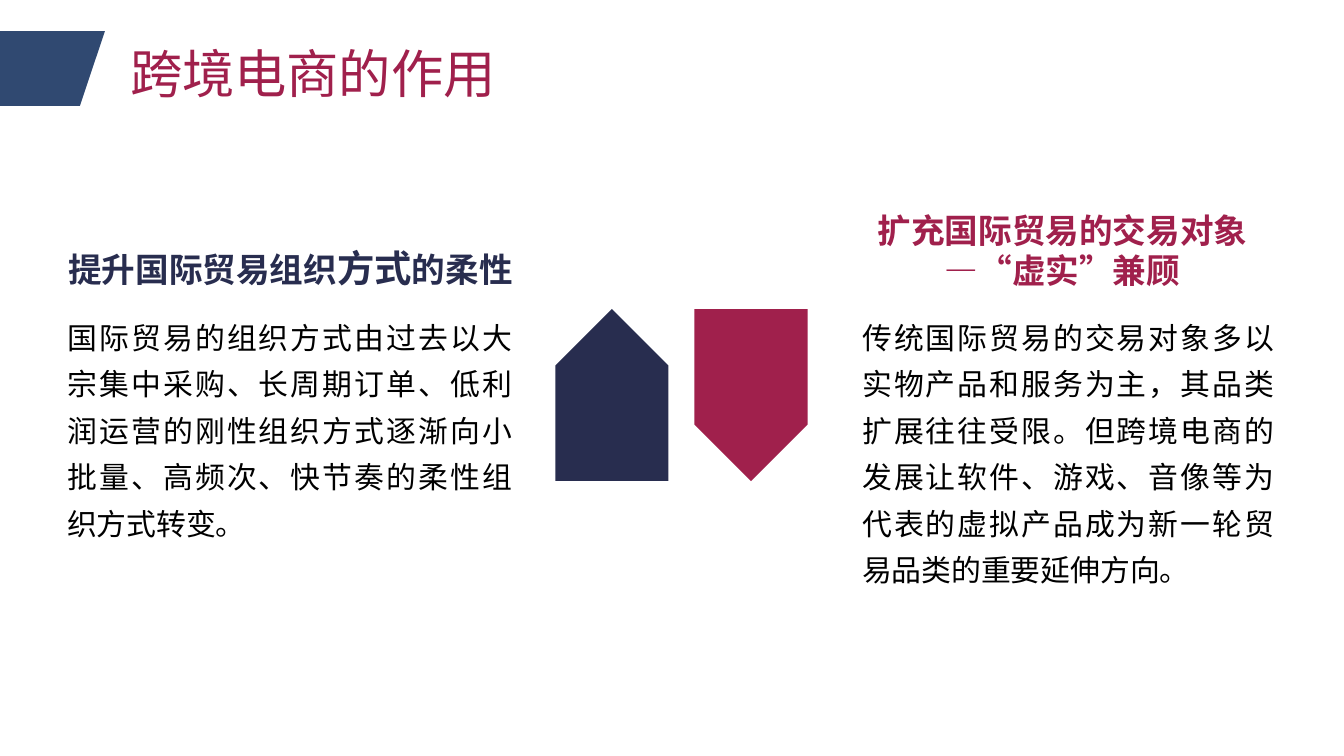
from pptx import Presentation
from pptx.dml.color import RGBColor
from pptx.enum.lang import MSO_LANGUAGE_ID as LANG
from pptx.enum.shapes import MSO_SHAPE as SHAPE
from pptx.enum.text import PP_ALIGN as ALIGN
from pptx.util import Emu, Pt
from lxml.etree import SubElement

PX = 9144000 / 1344
THEME = {
    "font": "Noto Sans CJK SC",
    "red": RGBColor.from_string("A0204C"),
    "navy": RGBColor.from_string("282D4F"),
    "blue": RGBColor.from_string("304971"),
    "black": RGBColor.from_string("000000"),
    "title": 28,
    "heading": 18,
    "emphasis": 20,
    "body": 16,
}


def add_text(s, text, box, size, color, bold=False, align=ALIGN.LEFT, spacing=None):
    tb = s.shapes.add_textbox(*[Emu(round(v * PX)) for v in box])
    tf = tb.text_frame
    tf.word_wrap = True
    p = tf.paragraphs[0]
    p.alignment = align
    p.line_spacing = spacing
    runs = [(text, size)] if isinstance(text, str) else text
    for words, run_size in runs:
        r = p.add_run()
        r.text = words
        r.font.size = Pt(THEME[run_size])
        r.font.bold = bold
        r.font.color.rgb = THEME[color]
        r.font.name = THEME["font"]
        r.font.language_id = LANG.SIMPLIFIED_CHINESE
        ns = r.font._element.nsmap["a"]
        SubElement(r.font._element, f"{{{ns}}}ea", typeface=THEME["font"])


def paint(sp, color):
    sp.shadow.inherit = False
    sp.fill.solid()
    sp.fill.fore_color.rgb = THEME[color]
    sp.line.fill.background()


prs = Presentation()
prs.slide_width = Emu(round(1344 * PX))
prs.slide_height = Emu(round(756 * PX))
s = prs.slides.add_slide(prs.slide_layouts[6])

builder = s.shapes.build_freeform(0, 31, scale=PX)
builder.add_line_segments([(105, 31), (80, 106), (0, 106)], close=True)
paint(builder.convert_to_shape(), "blue")
add_text(s, "跨境电商的作用", (117, 35, 453, 77), "title", "red")

ARROW_LENGTH, ARROW_WIDTH, ARROW_MIDDLE = 172, 113, 395
for center, rotation, color in [(751, 90, "red"), (612, 270, "navy")]:
    left, top = center - ARROW_LENGTH / 2, ARROW_MIDDLE - ARROW_WIDTH / 2
    box = [Emu(round(v * PX)) for v in (left, top, ARROW_LENGTH, ARROW_WIDTH)]
    arrow = s.shapes.add_shape(SHAPE.PENTAGON, *box)
    arrow.rotation = rotation
    paint(arrow, color)

columns = [
    ("扩充国际贸易的交易对象—“虚实”兼顾", (836, 203, 453, 95), "red",
     "传统国际贸易的交易对象多以实物产品和服务为主，其品类扩展往往受限。"
     "但跨境电商的发展让软件、游戏、音像等为代表的虚拟产品成为新一轮贸易品类的重要延伸方向。",
     (849, 302, 439, 296)),
    ([("提升国际贸易组织", "heading"), ("方式", "emphasis"), ("的柔性", "heading")],
     (40, 239, 501, 59), "navy",
     "国际贸易的组织方式由过去以大宗集中采购、长周期订单、低利润运营的刚性组织方式"
     "逐渐向小批量、高频次、快节奏的柔性组织方式转变。",
     (54, 302, 472, 249)),
]
for heading, heading_box, color, body, body_box in columns:
    add_text(s, heading, heading_box, "heading", color, bold=True, align=ALIGN.CENTER)
    add_text(s, body, body_box, "body", "black", align=ALIGN.JUSTIFY, spacing=1.3)

prs.save("out.pptx")
